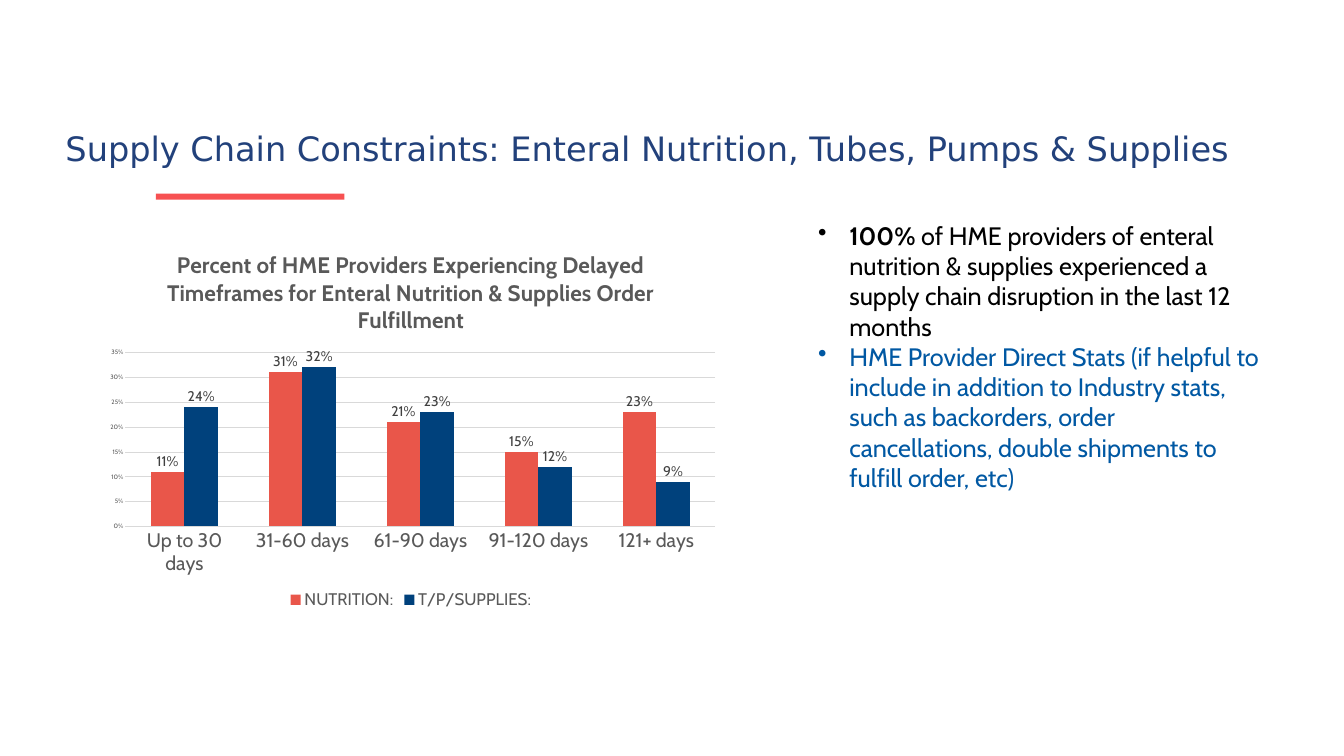
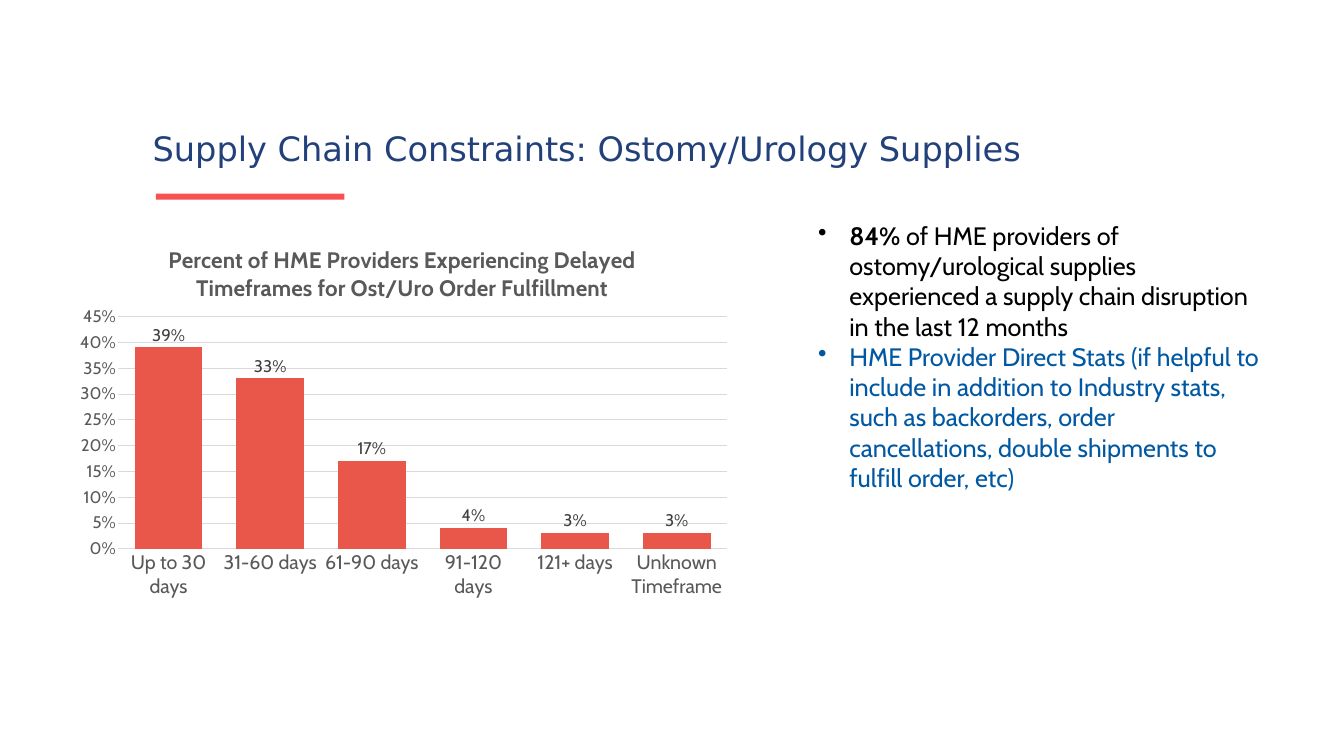
"""Build two slides on supply chain constraints, each with a column chart and bullets."""
from lxml import etree
from pptx import Presentation
from pptx.chart.data import CategoryChartData
from pptx.dml.color import RGBColor
from pptx.enum.chart import XL_CHART_TYPE, XL_LABEL_POSITION, XL_LEGEND_POSITION, XL_TICK_MARK
from pptx.enum.shapes import MSO_SHAPE
from pptx.enum.text import MSO_ANCHOR
from pptx.oxml.ns import qn
from pptx.util import Pt

COLUMNS = XL_CHART_TYPE.COLUMN_CLUSTERED
OUTSIDE_END = XL_LABEL_POSITION.OUTSIDE_END
LEGEND_BOTTOM = XL_LEGEND_POSITION.BOTTOM
NO_TICK = XL_TICK_MARK.NONE
RECTANGLE = MSO_SHAPE.RECTANGLE
TOP = MSO_ANCHOR.TOP
PX = 9144


class Theme:
    heading_font, body_font = "DejaVu Sans", "Cabin"
    heading = RGBColor.from_string("22417B")
    accent = RGBColor.from_string("F75152")
    text = RGBColor.from_string("000000")
    note = RGBColor.from_string("0058A3")
    axis = RGBColor.from_string("595959")
    label = RGBColor.from_string("404040")
    grid = RGBColor.from_string("D9D9D9")
    series = [RGBColor.from_string("E9564A"), RGBColor.from_string("00417C")]
    heading_size, body_size, chart_title_size = 48, 36, 32
    category_size, legend_size, chart_size = 28, 24, 10


def style_font(font, size, color, bold=False, name=Theme.body_font):
    font.name, font.size, font.bold = name, Pt(size), bold
    font.color.rgb = color


def add_text_box(page, left, top, width, height):
    box = page.shapes.add_textbox(left * PX, top * PX, width * PX, height * PX)
    box.text_frame.word_wrap = True
    box.text_frame.vertical_anchor = TOP
    return box.text_frame


DIRECT_STATS = ("HME Provider Direct Stats (if helpful to include in addition to Industry stats, "
                "such as backorders, order cancellations, double shipments to fulfill order, etc)")
PERIODS = ["Up to 30 days", "31-60 days", "61-90 days", "91-120 days", "121+ days"]
PAGES = [
    {
        "heading": "Supply Chain Constraints: Enteral Nutrition, Tubes, Pumps & Supplies",
        "heading_place": (120, 148, 2472, 227),
        "share": "100% ",
        "finding": "of HME providers of enteral nutrition & supplies experienced "
                   "a supply chain disruption in the last 12 months",
        "chart_title": "Percent of HME Providers Experiencing Delayed Timeframes "
                       "for Enteral Nutrition & Supplies Order Fulfillment",
        "chart_place": (186, 467, 1258, 750),
        "plot": {"x": 0.05, "y": 0.31, "w": 0.93, "h": 0.46},
        "categories": PERIODS,
        "series": {"NUTRITION:": [0.11, 0.31, 0.21, 0.15, 0.23],
                   "T/P/SUPPLIES:": [0.24, 0.32, 0.23, 0.12, 0.09]},
        "top_value": 0.35, "value_size": 9, "label_size": 20,
        "gap": 150, "overlap": 0, "legend": True, "axis_line": False,
    },
    {
        "heading": "Supply Chain Constraints: Ostomy/Urology Supplies",
        "heading_place": (293, 148, 2163, 227),
        "share": "84% ",
        "finding": "of HME providers of ostomy/urological supplies experienced "
                   "a supply chain disruption in the last 12 months",
        "chart_title": "Percent of HME Providers Experiencing Delayed Timeframes "
                       "for Ost/Uro Order Fulfillment",
        "chart_place": (126, 457, 1344, 743),
        "plot": {"x": 0.08, "y": 0.23, "w": 0.9, "h": 0.62},
        "categories": PERIODS + ["Unknown Timeframe"],
        "series": {"Series 1": [0.39, 0.33, 0.17, 0.04, 0.03, 0.03]},
        "top_value": 0.45, "value_size": 24, "label_size": 24,
        "gap": 50, "overlap": -27, "legend": False, "axis_line": True,
    },
]

deck = Presentation()
deck.slide_width, deck.slide_height = 2666 * PX, 1500 * PX

for content in PAGES:
    page = deck.slides.add_slide(deck.slide_layouts[6])

    rule = page.shapes.add_shape(RECTANGLE, 309 * PX, 384 * PX, 374 * PX, 12 * PX)
    rule.shadow.inherit = False
    rule.fill.solid()
    rule.fill.fore_color.rgb = Theme.accent
    rule.line.fill.background()

    para = add_text_box(page, *content["heading_place"]).paragraphs[0]
    para.text = content["heading"]
    para.line_spacing = Pt(130)
    style_font(para.runs[0].font, Theme.heading_size, Theme.heading, name=Theme.heading_font)

    frame = add_text_box(page, 1613, 432, 897, 677)
    bullets = [
        [(content["share"], Theme.text, True), (content["finding"], Theme.text, False)],
        [(DIRECT_STATS, Theme.note, False)],
    ]
    for index, spans in enumerate(bullets):
        para = frame.add_paragraph() if index else frame.paragraphs[0]
        properties = para._p.get_or_add_pPr()
        properties.set("marL", str(62 * PX))
        properties.set("indent", str(-62 * PX))
        etree.SubElement(properties, qn("a:buChar")).set("char", "•")
        for text, color, bold in spans:
            span = para.add_run()
            span.text = text
            style_font(span.font, Theme.body_size, color, bold)

    data = CategoryChartData(number_format="0%")
    data.categories = content["categories"]
    for name, values in content["series"].items():
        data.add_series(name, values)
    place = [length * PX for length in content["chart_place"]]
    chart = page.shapes.add_chart(COLUMNS, *place, data).chart
    style_font(chart.font, Theme.chart_size, Theme.text)

    chart.has_title = True
    para = chart.chart_title.text_frame.paragraphs[0]
    para.text = content["chart_title"]
    style_font(para.runs[0].font, Theme.chart_title_size, Theme.axis, True)
    chart.chart_title.include_in_layout = False

    chart.has_legend = content["legend"]
    if content["legend"]:
        chart.legend.position = LEGEND_BOTTOM
        chart.legend.include_in_layout = False
        style_font(chart.legend.font, Theme.legend_size, Theme.axis)

    axis_sizes = [(chart.category_axis, Theme.category_size),
                  (chart.value_axis, content["value_size"])]
    for axis, size in axis_sizes:
        axis.major_tick_mark = axis.minor_tick_mark = NO_TICK
        axis.format.line.fill.background()
        style_font(axis.tick_labels.font, size, Theme.axis)
    if content["axis_line"]:
        chart.category_axis.format.line.color.rgb = Theme.grid
        chart.category_axis.format.line.width = Pt(0.75)
    value_axis = chart.value_axis
    value_axis.minimum_scale, value_axis.maximum_scale = 0, content["top_value"]
    value_axis.major_unit = 0.05
    value_axis.tick_labels.number_format = "0%"
    value_axis.tick_labels.number_format_is_linked = False
    value_axis.major_gridlines.format.line.color.rgb = Theme.grid
    value_axis.major_gridlines.format.line.width = Pt(0.75)

    plot = chart.plots[0]
    plot.gap_width, plot.overlap = content["gap"], content["overlap"]
    plot.vary_by_categories = False
    for series, color in zip(plot.series, Theme.series):
        series.format.fill.solid()
        series.format.fill.fore_color.rgb = color
        labels = series.data_labels
        labels.show_value = True
        labels.position = OUTSIDE_END
        labels.number_format = "0%"
        labels.number_format_is_linked = False
        style_font(labels.font, content["label_size"], Theme.label)

    plot_area = chart._chartSpace.chart.plotArea
    for old_layout in plot_area.findall(qn("c:layout")):
        plot_area.remove(old_layout)
    layout = etree.Element(qn("c:layout"))
    plot_area.insert(0, layout)
    manual = etree.SubElement(layout, qn("c:manualLayout"))
    settings = {"layoutTarget": "inner", "xMode": "edge", "yMode": "edge", **content["plot"]}
    for tag, setting in settings.items():
        etree.SubElement(manual, qn(f"c:{tag}")).set("val", str(setting))

deck.save("out.pptx")
